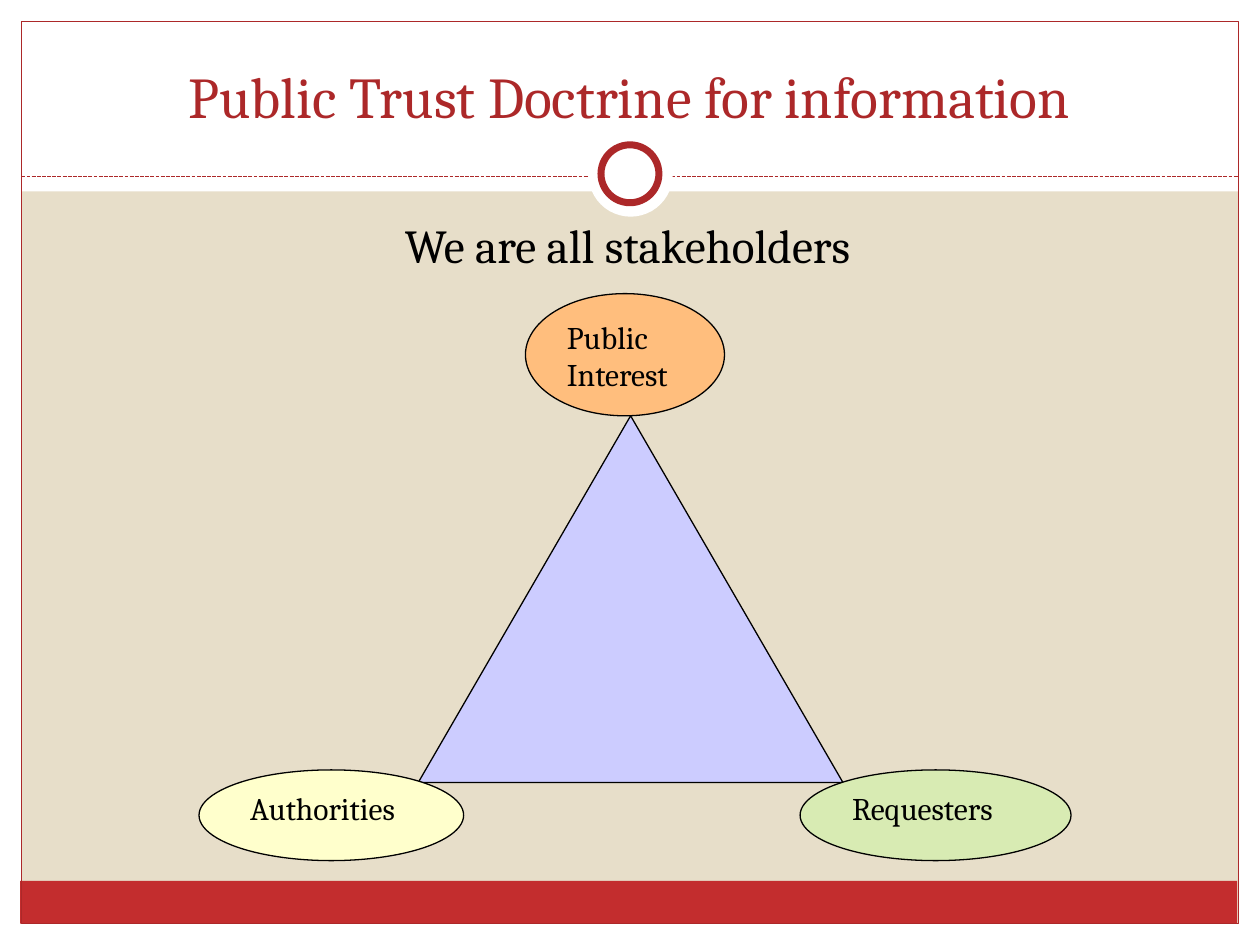
from pptx import Presentation
from pptx.dml.color import RGBColor
from pptx.enum.dml import MSO_LINE
from pptx.enum.shapes import MSO_CONNECTOR, MSO_SHAPE
from pptx.enum.text import MSO_ANCHOR, PP_ALIGN
from pptx.oxml.ns import qn
from pptx.util import Inches, Pt
from lxml.etree import SubElement

COLORS = {
    "background": "E7DEC9", "white": "FFFFFF", "black": "000000",
    "band": "C32D2E", "accent": "AC2829", "triangle": "CCCCFF",
    "authorities": "FFFFCC", "public": "FFBE7D", "requesters": "D8EBB3",
}
RGB = {name: RGBColor.from_string(value) for name, value in COLORS.items()}

presentation = Presentation()
presentation.slide_width, presentation.slide_height = Inches(10), Inches(7.5)
slide = presentation.slides.add_slide(presentation.slide_layouts[6])
slide.background.fill.solid()
slide.background.fill.fore_color.rgb = RGB["background"]


def place(left, top, width, height):
    """Turn percentages of the slide's size into lengths."""
    across, down = presentation.slide_width / 100, presentation.slide_height / 100
    return [round(length) for length in
            (left * across, top * down, width * across, height * down)]


def draw(shapes, kind, box, fill=None, line=None, weight=0.75):
    shape = shapes.add_shape(kind, *place(*box))
    shape.shadow.inherit = False
    if fill:
        shape.fill.solid()
        shape.fill.fore_color.rgb = RGB[fill]
    else:
        shape.fill.background()
    if line:
        shape.line.color.rgb = RGB[line]
        shape.line.width = Pt(weight)
    else:
        shape.line.fill.background()
    return shape


# White margins, header and red footer band
for box, fill in [
    ((0, 97.73, 100, 2.27), "white"),
    ((0, 0, 100, 20.27), "white"),
    ((0, 0, 1.7, 100), "white"),
    ((98.3, 0, 1.7, 100), "white"),
    ((1.6, 93.2, 96.6, 4.53), "band"),
]:
    draw(slide.shapes, MSO_SHAPE.RECTANGLE, box, fill)

# Frame and dashed divider
draw(slide.shapes, MSO_SHAPE.RECTANGLE, (1.7, 2.27, 96.6, 95.47), line="accent")
left, top, width, _ = place(1.7, 18.67, 96.6, 0)
divider = slide.shapes.add_connector(MSO_CONNECTOR.STRAIGHT, left, top, left + width, top)
divider.line.color.rgb = RGB["accent"]
divider.line.width = Pt(0.75)
divider.line.dash_style = MSO_LINE.SQUARE_DOT
SubElement(divider._element.spPr, qn("a:effectLst"))

# Ring on the divider
draw(slide.shapes, MSO_SHAPE.OVAL, (46.7, 14, 6.7, 8.93), "white")
draw(slide.shapes, MSO_SHAPE.OVAL, (47.7, 15.33, 4.6, 6.13), "white", "accent", 4)

# Title and statement
for text, box, size, color, anchor, space in [
    ("Public Trust Doctrine for information", (3.3, 3.33, 93.3, 11.07),
     33, "accent", MSO_ANCHOR.BOTTOM, 0),
    ("We are all stakeholders", (3.3, 22.27, 93, 66.67),
     27, "black", MSO_ANCHOR.TOP, 5.4),
]:
    frame = slide.shapes.add_textbox(*place(*box)).text_frame
    frame.word_wrap = True
    frame.vertical_anchor = anchor
    paragraph = frame.paragraphs[0]
    paragraph.text = text
    paragraph.alignment = PP_ALIGN.CENTER
    paragraph.space_before = Pt(space)
    paragraph.font.name = "Cambria"
    paragraph.font.size = Pt(size)
    paragraph.font.color.rgb = RGB[color]

# Triangle with a stakeholder at each corner
diagram = slide.shapes.add_group_shape()
draw(diagram.shapes, MSO_SHAPE.ISOSCELES_TRIANGLE, (33.2, 44, 33.7, 38.8),
     "triangle", "black")
for text, box, fill in [
    ("Authorities", (15.8, 81.47, 21, 9.6), "authorities"),
    ("Public Interest", (41.7, 31.07, 15.8, 12.93), "public"),
    ("Requesters", (63.5, 81.47, 21.5, 9.6), "requesters"),
]:
    stakeholder = draw(diagram.shapes, MSO_SHAPE.OVAL, box, fill, "black")
    frame = stakeholder.text_frame
    frame.word_wrap = True
    frame.vertical_anchor = MSO_ANCHOR.TOP
    paragraph = frame.paragraphs[0]
    paragraph.text = text
    paragraph.alignment = PP_ALIGN.LEFT
    paragraph.font.name = "Cambria"
    paragraph.font.size = Pt(18)
    paragraph.font.color.rgb = RGB["black"]

presentation.save("out.pptx")
